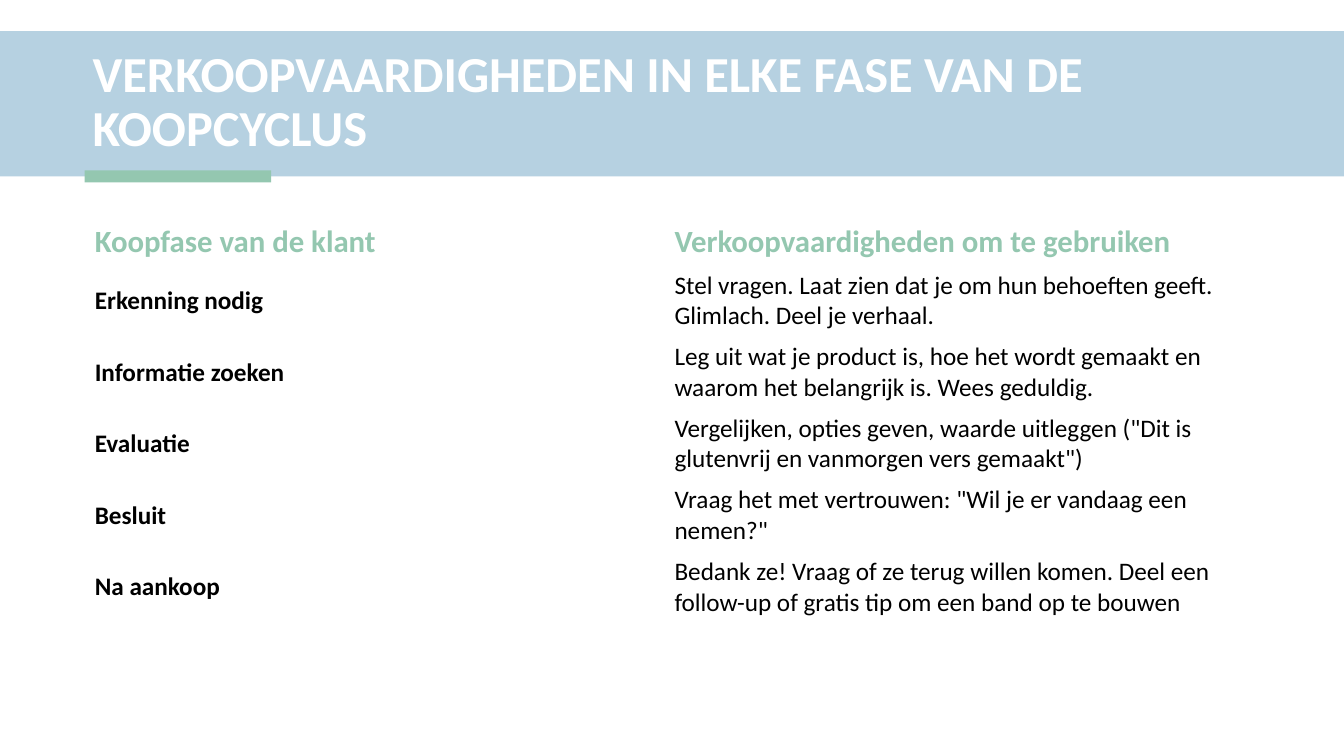
from pptx import Presentation
from pptx.dml.color import RGBColor
from pptx.enum.shapes import MSO_SHAPE
from pptx.enum.text import MSO_ANCHOR
from pptx.util import Inches, Pt

BLUE = RGBColor(0xB6, 0xD1, 0xE1)
GREEN = RGBColor(0x94, 0xC7, 0xB0)
WHITE = RGBColor(0xFF, 0xFF, 0xFF)
BLACK = RGBColor(0, 0, 0)

ROWS = [
    ("Koopfase van de klant", "Verkoopvaardigheden om te gebruiken"),
    ("Erkenning nodig",
     "Stel vragen. Laat zien dat je om hun behoeften geeft. Glimlach. Deel je verhaal."),
    ("Informatie zoeken",
     "Leg uit wat je product is, hoe het wordt gemaakt en waarom het belangrijk is. Wees geduldig."),
    ("Evaluatie",
     'Vergelijken, opties geven, waarde uitleggen ("Dit is glutenvrij en vanmorgen vers gemaakt")'),
    ("Besluit", 'Vraag het met vertrouwen: "Wil je er vandaag een nemen?"'),
    ("Na aankoop",
     "Bedank ze! Vraag of ze terug willen komen. Deel een follow-up of gratis tip om een band op te bouwen"),
]


def style(para, size, color, bold):
    font = para.font
    font.name = "Calibri"
    font.size = Pt(size)
    font.color.rgb = color
    font.bold = bold


deck = Presentation()
deck.slide_width = Inches(13.33)
deck.slide_height = Inches(7.5)
slide = deck.slides.add_slide(deck.slide_layouts[6])

# Title band and accent bar
for left, top, width, height, color in [
    (0, 0.31, 13.33, 1.44, BLUE),
    (0.84, 1.69, 1.85, 0.12, GREEN),
]:
    bar = slide.shapes.add_shape(MSO_SHAPE.RECTANGLE, Inches(left), Inches(top),
                                 Inches(width), Inches(height))
    bar.shadow.inherit = False
    bar.fill.solid()
    bar.fill.fore_color.rgb = color
    bar.line.fill.background()

# Title
box = slide.shapes.add_textbox(Inches(0.82), Inches(0.41), Inches(11.15), Inches(1.23))
frame = box.text_frame
frame.word_wrap = True
frame.vertical_anchor = MSO_ANCHOR.MIDDLE
title = frame.paragraphs[0]
title.text = "VERKOOPVAARDIGHEDEN IN ELKE FASE VAN DE KOOPCYCLUS"
title.line_spacing = 0.9
style(title, 36, WHITE, True)

# Table of buying phases and skills
table = slide.shapes.add_table(len(ROWS), 2, Inches(0.84), Inches(2.16),
                               Inches(11.5), Inches(4.02)).table
table.horz_banding = False
for r, texts in enumerate(ROWS):
    head = r == 0
    table.rows[r].height = Inches(0.47 if head else 0.71)
    for c, text in enumerate(texts):
        cell = table.cell(r, c)
        cell.fill.background()
        cell.vertical_anchor = MSO_ANCHOR.MIDDLE
        cell.text = text
        style(cell.text_frame.paragraphs[0], 22 if head else 18,
              GREEN if head else BLACK, head or c == 0)

deck.save("out.pptx")
